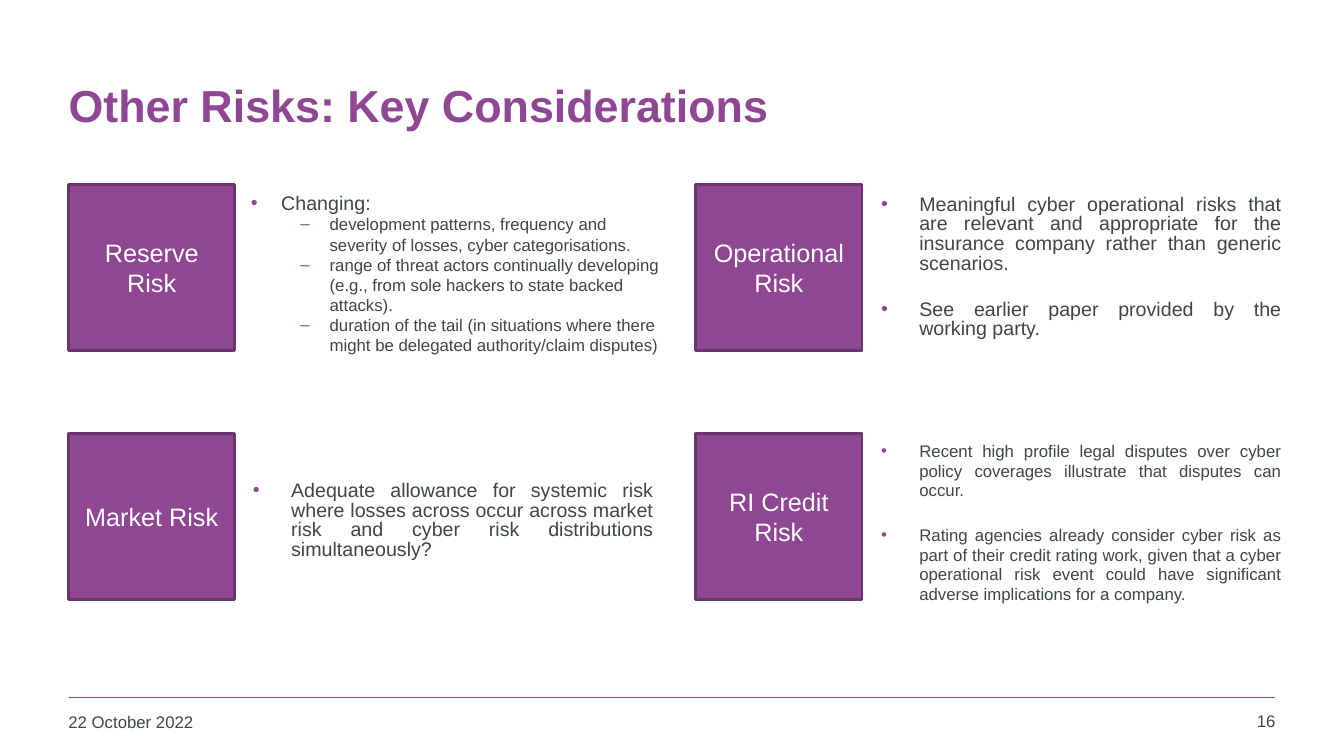
from dataclasses import dataclass

from lxml.etree import SubElement
from pptx import Presentation
from pptx.dml.color import RGBColor
from pptx.enum.shapes import MSO_CONNECTOR, MSO_SHAPE
from pptx.enum.text import MSO_ANCHOR, MSO_AUTO_SIZE, PP_ALIGN
from pptx.oxml.ns import qn
from pptx.util import Inches, Pt


@dataclass(frozen=True)
class Theme:
    font: str = "Arial"
    purple: str = "8F4693"
    edge: str = "6A346D"
    ink: str = "3F4548"
    white: str = "FFFFFF"
    title: int = 32
    tile: int = 18
    body: int = 14
    small: int = 12


T = Theme()
WIDTH, HEIGHT = 13.33, 7.5
LEFT, TOP = 0.68, 1.83
COL_STEP, ROW_STEP = 6.22, 2.47
TILE = 1.65

CHANGES = [
    "development patterns, frequency and severity of losses, cyber categorisations.",
    "range of threat actors continually developing (e.g., from sole hackers to state backed attacks).",
    "duration of the tail (in situations where there might be delegated authority/claim disputes)",
]

RISKS = [
    dict(name="Reserve Risk", offset=(1.73, 0.02), size=(4.24, 1.65),
         points=["Changing:"], subpoints=CHANGES),
    dict(name="Operational Risk", offset=(1.74, -0.05), size=(4.17, 1.65), points=[
        "Meaningful cyber operational risks that are relevant and appropriate for the "
        "insurance company rather than generic scenarios.",
        "See earlier paper provided by the working party."]),
    dict(name="Market Risk", offset=(1.73, 0.32), size=(4.17, 1.32), points=[
        "Adequate allowance for systemic risk where losses across occur across market "
        "risk and cyber risk distributions simultaneously?"]),
    dict(name="RI Credit Risk", offset=(1.74, -0.08), size=(4.17, 1.65), pt=T.small, points=[
        "Recent high profile legal disputes over cyber policy coverages illustrate that "
        "disputes can occur.",
        "Rating agencies already consider cyber risk as part of their credit rating work, "
        "given that a cyber operational risk event could have significant adverse "
        "implications for a company."]),
]


def rgb(color):
    return RGBColor.from_string(color)


def set_frame(tf, insets=(0.1, 0.05, 0.1, 0.05), anchor=MSO_ANCHOR.TOP):
    tf.word_wrap = True
    tf.auto_size = MSO_AUTO_SIZE.NONE
    tf.vertical_anchor = anchor
    tf.margin_left, tf.margin_top, tf.margin_right, tf.margin_bottom = map(Inches, insets)
    return tf


def add_bullet(p, char, indent, hanging, level):
    pPr = p._p.get_or_add_pPr()
    pPr.set("marL", str(Inches(indent)))
    pPr.set("indent", str(-Inches(hanging)))
    p.level = level
    color = SubElement(pPr, qn("a:buClr"))
    SubElement(color, qn("a:srgbClr"), val=T.purple)
    SubElement(pPr, qn("a:buFont"), typeface=T.font)
    SubElement(pPr, qn("a:buChar"), char=char)


def write(tf, text, size=T.body, color=T.ink, bold=False, align=PP_ALIGN.LEFT,
          bullet=None, level=0, line=None, before=0, after=0):
    p = tf.paragraphs[0]
    first = not p.runs
    if not first:
        p = tf.add_paragraph()
    p.alignment = align
    p.space_before = Pt(0 if first else before)
    p.space_after = Pt(after)
    if line:
        p.line_spacing = Pt(line)
    if bullet:
        add_bullet(p, *bullet, level)
    r = p.add_run()
    r.text = text
    r.font.name, r.font.size, r.font.bold = T.font, Pt(size), bold
    r.font.color.rgb = rgb(color)


def add_text_box(s, x, y, w, h, **frame):
    return set_frame(s.shapes.add_textbox(*map(Inches, (x, y, w, h))).text_frame, **frame)


def add_title(s, x, y, w, h):
    sp = s.shapes.title
    sp.left, sp.top, sp.width, sp.height = map(Inches, (x, y, w, h))
    tf = set_frame(sp.text_frame, anchor=MSO_ANCHOR.MIDDLE)
    write(tf, "Other Risks: Key Considerations", size=T.title, color=T.purple, bold=True)


def add_tile(s, x, y, side, name):
    sp = s.shapes.add_shape(MSO_SHAPE.RECTANGLE, *map(Inches, (x, y, side, side)))
    sp.shadow.inherit = False
    sp.fill.solid()
    sp.fill.fore_color.rgb = rgb(T.purple)
    sp.line.color.rgb = rgb(T.edge)
    sp.line.width = Pt(2)
    tf = set_frame(sp.text_frame, anchor=MSO_ANCHOR.MIDDLE)
    write(tf, name, size=T.tile, color=T.white, align=PP_ALIGN.CENTER)


def add_risk(s, x, y, name, offset, size, points, subpoints=(), pt=T.body):
    add_tile(s, x, y, TILE, name)
    dx, dy = offset
    if subpoints:
        insets, bullet, spacing = (0.08, 0.04, 0.08, 0.04), ("•", 0.3, 0.3), {}
    else:
        insets, bullet = (0.1, 0.16, 0.1, 0.05), ("•", 0.38, 0.38)
        spacing = dict(align=PP_ALIGN.JUSTIFY, line=14, before=pt / 2, after=12)
    tf = add_text_box(s, x + dx, y + dy, *size, insets=insets)
    for point in points:
        write(tf, point, size=pt, bullet=bullet, **spacing)
    for point in subpoints:
        write(tf, point, size=T.small, bullet=("–", 0.78, 0.29), level=1)


def add_footer(s, x, y, w, h):
    ends = map(Inches, (x, y, x + w, y))
    rule = s.shapes.add_connector(MSO_CONNECTOR.STRAIGHT, *ends)
    rule.line.color.rgb = rgb(T.purple)
    rule.line.width = Pt(1)
    SubElement(rule._element.spPr, qn("a:effectLst"))
    date_w, number_w = 2.94, 0.94
    date = add_text_box(s, x - 0.1, y + 0.09, date_w, h)
    write(date, "22 October 2022", size=T.small)
    number = add_text_box(s, x + w + 0.1 - number_w, y + 0.08, number_w, h)
    write(number, "16", size=T.small, align=PP_ALIGN.RIGHT)


def main():
    prs = Presentation()
    prs.slide_width, prs.slide_height = Inches(WIDTH), Inches(HEIGHT)
    s = prs.slides.add_slide(prs.slide_layouts[5])
    add_title(s, LEFT - 0.1, 0.41, 12.09, 1.25)
    for i, risk in enumerate(RISKS):
        row, col = divmod(i, 2)
        add_risk(s, LEFT + col * COL_STEP, TOP + row * ROW_STEP, **risk)
    add_footer(s, LEFT, 6.92, 11.97, 0.36)
    prs.save("out.pptx")


if __name__ == "__main__":
    main()
